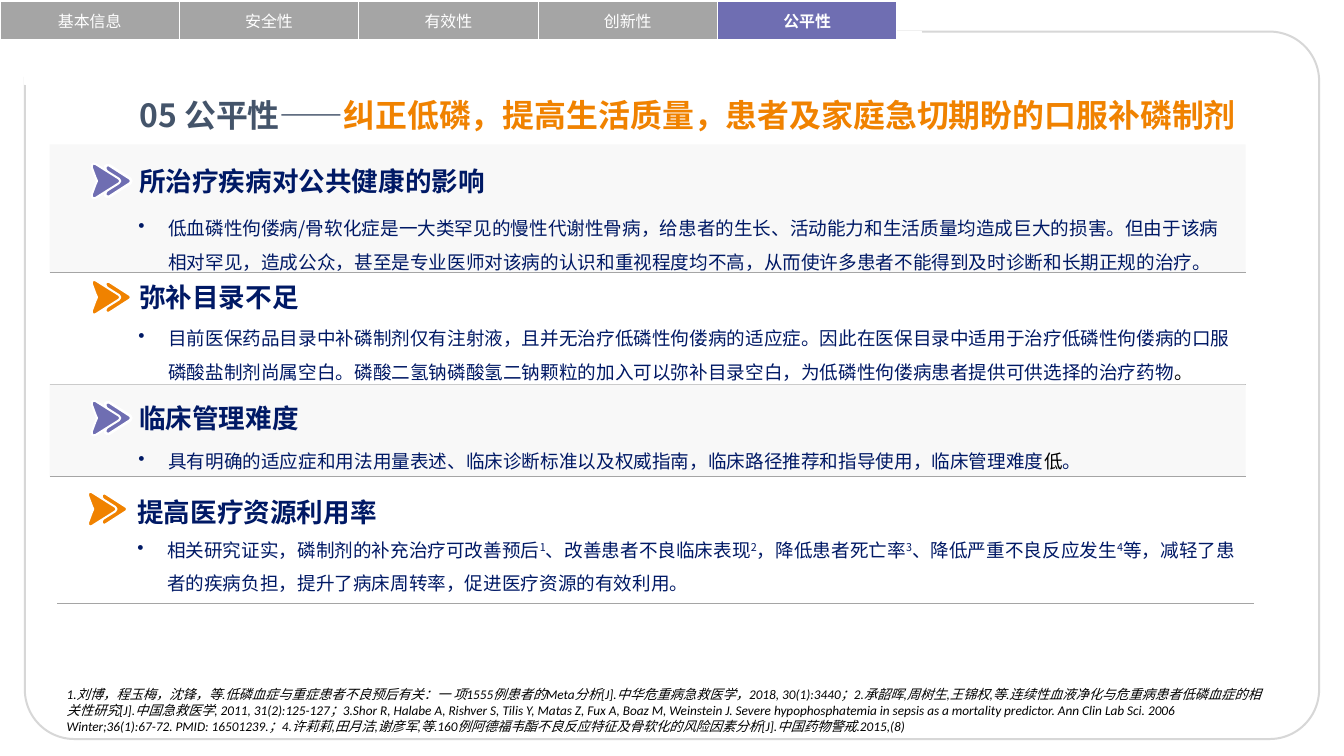
import functools

import pptx
import pptx.dml.color
import pptx.enum.shapes
import pptx.enum.text
import pptx.oxml
import pptx.oxml.ns
import pptx.util

Cm = pptx.util.Cm
Pt = pptx.util.Pt
RGB = pptx.dml.color.RGBColor
SHAPE = pptx.enum.shapes.MSO_SHAPE
ALIGN = pptx.enum.text.PP_ALIGN
ANCHOR = pptx.enum.text.MSO_ANCHOR
FIT = pptx.enum.text.MSO_AUTO_SIZE
qn = pptx.oxml.ns.qn

WHITE = RGB(0xFF, 0xFF, 0xFF)
BLACK = RGB(0, 0, 0)
GREY = RGB(0xA5, 0xA5, 0xA5)
FRAME = RGB(0xD7, 0xD7, 0xD7)
PALE = RGB(0xF2, 0xF2, 0xF2)
PURPLE = RGB(0x6F, 0x6E, 0xB2)
ORANGE = RGB(0xF0, 0x82, 0x00)
NAVY = RGB(0x00, 0x19, 0x65)
SLATE = RGB(0x44, 0x54, 0x6A)
SANS = "Noto Sans CJK SC"

TABS = ["基本信息", "安全性", "有效性", "创新性", "公平性"]
TITLE = ["05 公平性——", "纠正低磷，提高生活质量，患者及家庭急切期盼的口服补磷制剂"]
HEALTH = ["低血磷性佝偻病/骨软化症是一大类罕见的慢性代谢性骨病，给患者的生长、活动能力和生活质量均造成巨大的损害。但由于该病相对罕见，造成公众，甚至是专业医师对该病的认识和重视程度均不高，从而使许多患者不能得到及时诊断和长期正规的治疗。"]
LISTING = ["目前医保药品目录中补磷制剂仅有注射液，且并无治疗低磷性佝偻病的适应症。因此在医保目录中适用于治疗低磷性佝偻病的口服磷酸盐制剂尚属空白。磷酸二氢钠磷酸氢二钠颗粒的加入可以弥补目录空白，为低磷性佝偻病患者提供可供选择的治疗药物", "。"]
CLINIC = ["具有明确的适应症和用法用量表述、临床诊断标准以及权威指南，临床路径推荐和指导使用，临床管理难度", "低", "。"]
USAGE = ["相关研究证实，磷制剂的补充治疗可改善预后", "1", "、改善患者不良临床表现", "2", "，降低患者死亡率", "3", "、降低严重不良反应发生", "4", "等，减轻了患者的疾病负担，提升了病床周转率，促进医疗资源的有效利用。"]
NOTES = "1.刘博，程玉梅，沈锋，等.低磷血症与重症患者不良预后有关：一 项1555例患者的Meta分析[J].中华危重病急救医学，2018, 30(1):3440；2.承韶晖,周树生,王锦权,等.连续性血液净化与危重病患者低磷血症的相关性研究[J].中国急救医学, 2011, 31(2):125-127；3.Shor R, Halabe A, Rishver S, Tilis Y, Matas Z, Fux A, Boaz M, Weinstein J. Severe hypophosphatemia in sepsis as a mortality predictor. Ann Clin Lab Sci. 2006 Winter;36(1):67-72. PMID: 16501239.；4.许莉莉,田月洁,谢彦军,等.160例阿德福韦酯不良反应特征及骨软化的风险因素分析[J].中国药物警戒.2015,(8)"

FRONT = [(76, 0), (72, -6), (10, -45), (5, -46), (1, -44), (0, -36), (10, -9), (14, 0)]
BACK = [(105, 0), (102, -6), (46, -42), (41, -42), (36, -39), (36, -32), (46, -9), (48, 0)]


def tint(run, color):
    """Colour one run."""
    run.font.color.rgb = color


def lift(run):
    """Raise one run to superscript."""
    run._r.get_or_add_rPr().set("baseline", "30000")


def write(para, parts, size, color, bold=False, face=SANS, mark=None, space=None):
    """Fill a paragraph; every second part is passed to mark."""
    font = para.font
    font.size, font.bold, font.name = Pt(size), bold, face
    font.color.rgb = color
    base = para._p.get_or_add_pPr().find(qn("a:defRPr"))
    pptx.oxml.ns.qn and base.append(base.makeelement(qn("a:ea"), {"typeface": SANS}))
    if space:
        para.line_spacing = space
    for rank, part in enumerate(parts):
        run = para.add_run()
        run.text = part
        if rank % 2:
            mark(run)


def bullet(para):
    """Give a paragraph a hanging bullet."""
    props = para._p.get_or_add_pPr()
    props.set("marL", str(Cm(0.79)))
    props.set("indent", str(-Cm(0.79)))
    sign = props.makeelement(qn("a:buChar"), {"char": "•"})
    props.find(qn("a:defRPr")).addprevious(sign)


def label(slide, box, inset=None, anchor=ANCHOR.TOP):
    """Add a wrapping text box and return its frame."""
    frame = slide.shapes.add_textbox(*map(Cm, box)).text_frame
    frame.word_wrap = True
    frame.auto_size = FIT.SHAPE_TO_FIT_TEXT
    frame.vertical_anchor = anchor
    if inset:
        frame.margin_left = frame.margin_right = Cm(inset)
        frame.margin_top = frame.margin_bottom = Cm(inset)
    return frame


def block(slide, kind, box, fill=None, line=None, width=1):
    """Add a flat preset shape."""
    shape = slide.shapes.add_shape(kind, *map(Cm, box))
    shape.shadow.inherit = False
    if fill is None:
        shape.fill.background()
    else:
        shape.fill.solid()
        shape.fill.fore_color.rgb = fill
    if line is None:
        shape.line.fill.background()
    else:
        shape.line.color.rgb = line
        shape.line.width = Pt(width)
    return shape


def band(slide, box):
    """Add a half-transparent pale band."""
    shape = block(slide, SHAPE.RECTANGLE, box, PALE)
    tone = shape._element.spPr.find(qn("a:solidFill"))[0]
    tone.append(tone.makeelement(qn("a:alpha"), {"val": "50000"}))


def rule(slide, left, top, width):
    """Add a thin grey line."""
    line = slide.shapes.add_connector(
        pptx.enum.shapes.MSO_CONNECTOR.STRAIGHT, Cm(left), Cm(top), Cm(left + width), Cm(top))
    line.line.color.rgb = GREY
    line.line.width = Pt(0.5)
    props = line._element.spPr
    props.append(props.makeelement(qn("a:effectLst"), {}))


def arrow(slide, left, mid, color):
    """Draw a double chevron centred on mid."""
    for half, width in ((BACK, 2), (FRONT, 1.5)):
        edge = half + [(x, -y) for x, y in half[-2:0:-1]]
        path = slide.shapes.build_freeform(*edge[0], scale=Cm(0.01))
        path.add_line_segments(edge[1:], close=True)
        shape = path.convert_to_shape(Cm(left), Cm(mid))
        shape.shadow.inherit = False
        shape.fill.solid()
        shape.fill.fore_color.rgb = color
        shape.line.color.rgb = WHITE
        shape.line.width = Pt(width)


def tabs(slide, box, names):
    """Build the tab row with the last tab active."""
    table = slide.shapes.add_table(1, len(names), *map(Cm, box)).table
    table.first_row = table.horz_banding = False
    for col, name in enumerate(names):
        cell = table.cell(0, col)
        active = col == len(names) - 1
        cell.vertical_anchor = ANCHOR.MIDDLE
        para = cell.text_frame.paragraphs[0]
        para.alignment = ALIGN.CENTER
        write(para, [name], 12, WHITE, active)
        props = cell._tc.get_or_add_tcPr()
        for side, width in (("L", 1), ("R", 1), ("T", 1), ("B", 3)):
            edge = props.makeelement(qn("a:ln" + side), {"w": str(Pt(width))})
            fill = edge.makeelement(qn("a:solidFill"), {})
            fill.append(fill.makeelement(qn("a:srgbClr"), {"val": str(WHITE)}))
            edge.append(fill)
            props.append(edge)
        cell.fill.solid()
        cell.fill.fore_color.rgb = PURPLE if active else GREY


def heading(slide, box):
    """Place the title."""
    title = slide.shapes.title
    title.left, title.top, title.width, title.height = map(Cm, box)
    frame = title.text_frame
    frame.word_wrap = False
    frame.auto_size = FIT.SHAPE_TO_FIT_TEXT
    frame.vertical_anchor = ANCHOR.TOP
    para = frame.paragraphs[0]
    para.alignment = ALIGN.LEFT
    write(para, TITLE, 24, SLATE, True, mark=functools.partial(tint, color=ORANGE))


def section(slide, box, color, name, parts, mid, drop, space=1.5):
    """Place a headed point; drop is the body offset, or None for one shared box."""
    left, top, width, height = box
    if color == PURPLE:
        band(slide, box)
    rule(slide, left, top + height, width)
    if drop is None:
        frame = label(slide, (left + 1.88, top - 0.03, 29.74, 3.23))
        write(frame.paragraphs[0], [name], 20, NAVY, True, space=space)
        body, mark = frame.add_paragraph(), lift
    else:
        frame = label(slide, (left + 2.08, top + mid - 0.75, 28.24, 1.47), 0.3, ANCHOR.BOTTOM)
        write(frame.paragraphs[0], [name], 20, NAVY, True)
        body = label(slide, (left + 2.06, top + drop, 29.8, 2.29), 0.3).paragraphs[0]
        mark = functools.partial(tint, color=BLACK)
    write(body, parts, 14, NAVY, mark=mark, space=space)
    bullet(body)
    arrow(slide, left + (0.82 if drop is None else 1.12), top + mid, color)


def main():
    """Build and save the slide."""
    deck = pptx.Presentation()
    deck.slide_width, deck.slide_height = Cm(35.71), Cm(20.09)
    slide = deck.slides.add_slide(deck.slide_layouts[5])
    frame = block(slide, SHAPE.ROUNDED_RECTANGLE, (0.66, 0.84, 34.39, 18.8), None, FRAME, 1.5)
    frame.adjustments[0] = 0.07
    block(slide, SHAPE.RECTANGLE, (0.66, 0.84, 23.83, 1.4), WHITE, WHITE)
    tabs(slide, (0, 0.03, 23.83, 1.04), TABS)
    heading(slide, (3.45, 2.41, 30.18, 1.27))
    section(slide, (1.32, 3.84, 31.78, 3.4), PURPLE, "所治疗疾病对公共健康的影响", HEALTH, 0.97, 1.34)
    section(slide, (1.32, 7.24, 31.78, 2.97), ORANGE, "弥补目录不足", LISTING, 0.66, 0.86)
    section(slide, (1.32, 10.21, 31.78, 2.44), PURPLE, "临床管理难度", CLINIC, 0.9, 1.27, 1.3)
    section(slide, (1.52, 12.65, 31.8, 3.38), ORANGE, "提高医疗资源利用率", USAGE, 0.88, None)
    para = label(slide, (1.52, 18.11, 32.23, 1.55)).paragraphs[0]
    write(para, [NOTES], 10, BLACK, face="Calibri")
    para.font.italic = True
    deck.save("out.pptx")


if __name__ == "__main__":
    main()
